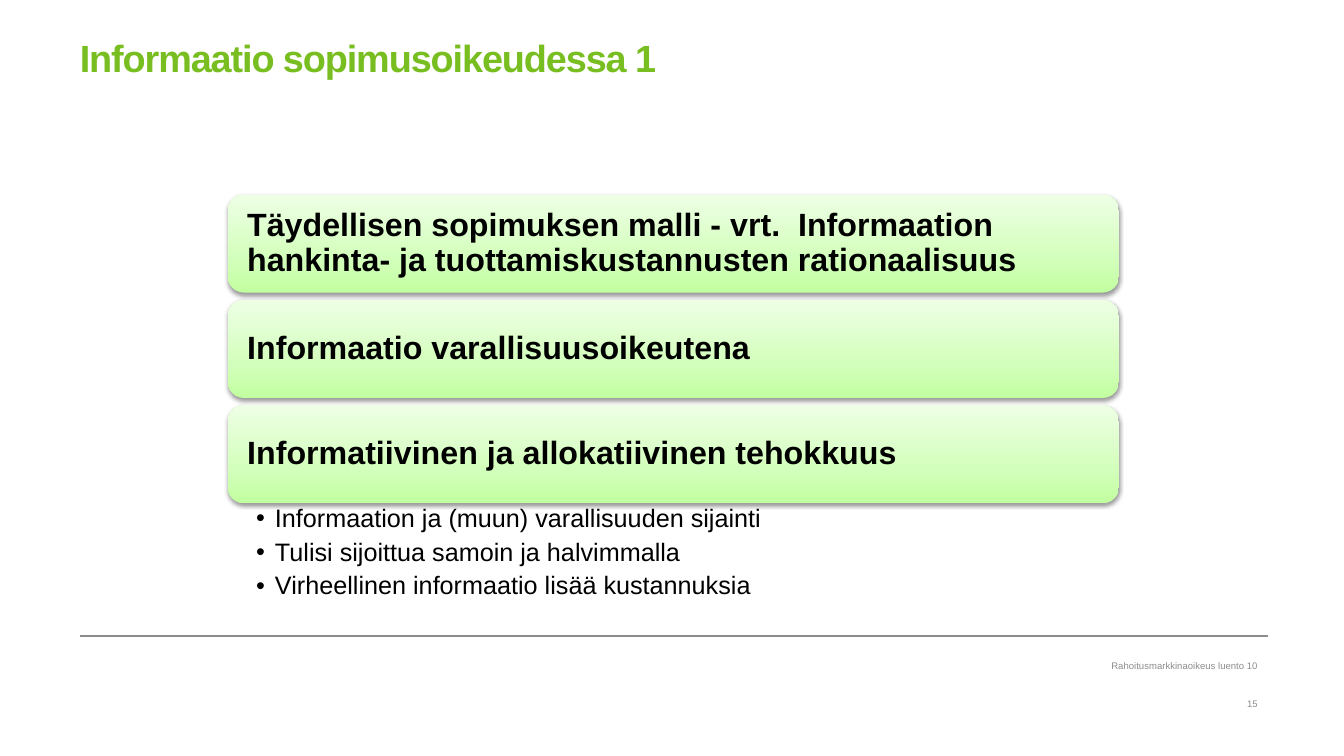
from lxml.etree import SubElement
from pptx import Presentation
from pptx.dml.color import RGBColor
from pptx.enum.shapes import MSO_CONNECTOR, MSO_SHAPE
from pptx.enum.text import MSO_ANCHOR, MSO_AUTO_SIZE, PP_ALIGN
from pptx.oxml import parse_xml
from pptx.oxml.ns import nsdecls, qn
from pptx.util import Pt

GREEN, BLACK, GREY = "78BE20", "000000", "8C8C8C"


def color(value):
    return RGBColor.from_string(value)


def write(shape, *lines, size, ink=BLACK, bold=False, align=PP_ALIGN.LEFT,
          anchor=MSO_ANCHOR.MIDDLE, margins=(0, 0, 0, 0), spacing=1.0,
          after=0, tracking=None, bullet=None, indent=0):
    frame = shape.text_frame
    frame.word_wrap = True
    frame.auto_size = MSO_AUTO_SIZE.NONE
    frame.vertical_anchor = anchor
    (frame.margin_left, frame.margin_top,
     frame.margin_right, frame.margin_bottom) = map(Pt, margins)
    for number, line in enumerate(lines):
        paragraph = frame.paragraphs[0] if number == 0 else frame.add_paragraph()
        paragraph.alignment = align
        paragraph.line_spacing = spacing
        paragraph.space_before = Pt(0)
        paragraph.space_after = Pt(after)
        if bullet:
            properties = paragraph._p.get_or_add_pPr()
            properties.set("marL", str(Pt(indent)))
            properties.set("indent", str(-Pt(indent)))
            SubElement(properties, qn("a:buChar")).set("char", bullet)
        run = paragraph.add_run()
        run.text = line
        run.font.name = "Arial"
        run.font.size = Pt(size)
        run.font.bold = bold
        run.font.color.rgb = color(ink)
        if tracking:
            run.font._element.set("spc", str(round(tracking * 100)))


presentation = Presentation()
presentation.slide_width, presentation.slide_height = Pt(960), Pt(540)
slide = presentation.slides.add_slide(presentation.slide_layouts[1])
title, body = slide.placeholders

# Footer rule
rule = slide.shapes.add_connector(
    MSO_CONNECTOR.STRAIGHT, Pt(57), Pt(454.3), Pt(906), Pt(454.3))
rule.line.color.rgb = color(GREY)
rule.line.width = Pt(0.75)
SubElement(rule._element.spPr, qn("a:effectLst"))

# Title
title.left, title.top, title.width, title.height = Pt(57), Pt(30), Pt(849), Pt(94)
write(title, "Informaatio sopimusoikeudessa 1", size=27, ink=GREEN, bold=True,
      anchor=MSO_ANCHOR.TOP, spacing=0.85, tracking=-0.8)

# Stacked topic boxes
topics = [
    "Täydellisen sopimuksen malli - vrt.  Informaation hankinta- ja "
    "tuottamiskustannusten rationaalisuus",
    "Informaatio varallisuusoikeutena",
    "Informatiivinen ja allokatiivinen tehokkuus",
]
left, top, width, height, step = 162.7, 139, 636.5, 70, 75.3
gradient = [(0, "C2FFA0"), (35, "D3FFBC"), (100, "EEFFE5")]
for index, topic in enumerate(topics):
    box = slide.shapes.add_shape(
        MSO_SHAPE.ROUNDED_RECTANGLE,
        Pt(left), Pt(top + index * step), Pt(width), Pt(height))
    box.line.fill.background()

    # Three-stop gradient, darkest at the bottom
    box.fill.gradient()
    box.fill.gradient_angle = 90
    stops = box._element.spPr.find(".//" + qn("a:gsLst"))
    stops[:] = [
        parse_xml(f'<a:gs {nsdecls("a")} pos="{position * 1000}">'
                  f'<a:srgbClr val="{tint}"/></a:gs>')
        for position, tint in gradient]

    # Soft shadow straight below
    box.shadow.inherit = False
    box._element.spPr.find(qn("a:effectLst")).append(parse_xml(
        f'<a:outerShdw {nsdecls("a")} blurRad="{Pt(3.1)}" dist="{Pt(1.6)}" '
        'dir="5400000" rotWithShape="0"><a:srgbClr val="000000">'
        '<a:alpha val="38000"/></a:srgbClr></a:outerShdw>'))
    write(box, topic, size=23, bold=True, margins=(10.5, 7, 10.5, 7), spacing=0.9)

# Bullets under the last box
body.left, body.top, body.width, body.height = Pt(left), Pt(359.3), Pt(width), Pt(69)
write(body, "Informaation ja (muun) varallisuuden sijainti",
      "Tulisi sijoittua samoin ja halvimmalla",
      "Virheellinen informaatio lisää kustannuksia",
      size=18, anchor=MSO_ANCHOR.TOP, margins=(20.2, 2.2, 13, 2.2),
      spacing=0.9, after=4.5, bullet="•", indent=13.5)

# Footer and page number
for text, footer_top in [("Rahoitusmarkkinaoikeus luento 10", 468.7), ("15", 496)]:
    footer = slide.shapes.add_textbox(Pt(518.4), Pt(footer_top), Pt(380), Pt(13))
    write(footer, text, size=6.8, ink=GREY, align=PP_ALIGN.RIGHT)

presentation.save("out.pptx")
